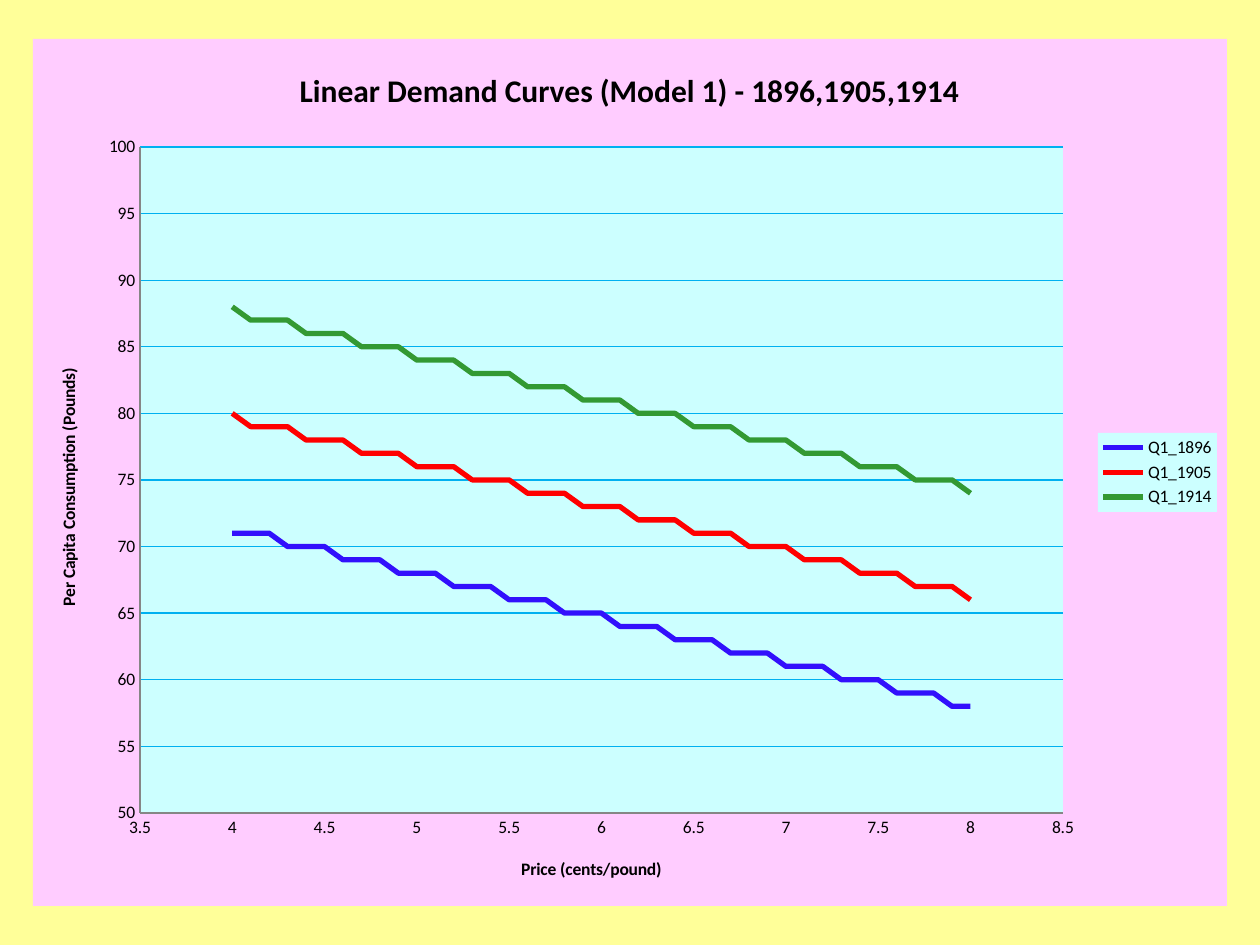
from lxml.etree import SubElement
from pptx import Presentation
from pptx.chart.data import XyChartData
from pptx.dml.color import RGBColor
from pptx.enum.chart import XL_CHART_TYPE as CT, XL_LEGEND_POSITION as LP, XL_TICK_MARK as TM
from pptx.oxml import parse_xml
from pptx.oxml.ns import nsdecls, qn
from pptx.util import Emu, Pt

PX = 914400 // 126
BLACK = RGBColor(0x00, 0x00, 0x00)
YELLOW = RGBColor(0xFF, 0xFF, 0x99)
PINK = RGBColor(0xFF, 0xCC, 0xFF)
CYAN = RGBColor(0xCC, 0xFF, 0xFF)
SKY = RGBColor(0x00, 0xB0, 0xF0)
GREY = RGBColor(0x86, 0x86, 0x86)
BLUE = RGBColor(0x32, 0x10, 0xFC)
RED = RGBColor(0xFF, 0x00, 0x00)
GREEN = RGBColor(0x33, 0x99, 0x33)

FRAME = (33, 39, 1194, 867)
SLOPE = -3.34
PRICES = [n / 10 for n in range(40, 81)]
CURVES = [("Q1_1896", 71.25, BLUE), ("Q1_1905", 79.53, RED), ("Q1_1914", 87.8, GREEN)]


class ChartSlide:
    """Holds the style and the slide with its demand chart."""

    def __init__(self, prs):
        self.s = prs.slides.add_slide(prs.slide_layouts[6])
        self.s.background.fill.solid()
        self.s.background.fill.fore_color.rgb = YELLOW

    def font(self, font, size, bold=False):
        style = {"name": "Calibri", "size": Pt(size), "bold": bold}
        for key, value in style.items():
            setattr(font, key, value)
        font.color.rgb = BLACK

    def line(self, line, color, width):
        line.color.rgb = color
        line.width = Pt(width)

    def fill(self, color):
        return parse_xml(
            f'<c:spPr {nsdecls("c", "a")}><a:solidFill><a:srgbClr val="{color}"/></a:solidFill>'
            "<a:ln><a:noFill/></a:ln></c:spPr>")

    def place(self, el, left, top, width=None, height=None, index=1):
        layout = el.find(qn("c:layout"))
        if layout is None:
            layout = el.makeelement(qn("c:layout"))
            el.insert(index, layout)
        for child in list(layout):
            layout.remove(child)
        manual = SubElement(layout, qn("c:manualLayout"))
        x, y, w, h = FRAME
        values = {"xMode": "edge", "yMode": "edge",
                  "x": round((left - x) / w, 4), "y": round((top - y) / h, 4)}
        if width:
            values = {"layoutTarget": "inner"} | values if index == 0 else values
            values |= {"w": round(width / w, 4), "h": round(height / h, 4)}
        for key, value in values.items():
            SubElement(manual, qn(f"c:{key}")).set("val", str(value))

    def title(self, owner, text, size, left, top):
        tf = owner.text_frame
        tf.text = text
        self.font(tf.paragraphs[0].runs[0].font, size, True)
        self.place(owner._element, left, top)

    def axis(self, axis, low, high, step, text, left, top):
        style = {"minimum_scale": low, "maximum_scale": high, "major_unit": step,
                 "major_tick_mark": TM.NONE, "minor_tick_mark": TM.NONE,
                 "has_major_gridlines": False, "has_title": True}
        for key, value in style.items():
            setattr(axis, key, value)
        axis.tick_labels.number_format = "General"
        axis.tick_labels.number_format_is_linked = False
        self.font(axis.tick_labels.font, 10)
        self.line(axis.format.line, GREY, 0.75)
        self.title(axis.axis_title, text, 10, left, top)

    def chart(self):
        data = XyChartData()
        for name, start, _ in CURVES:
            series = data.add_series(name)
            for price in PRICES:
                series.add_data_point(price, round(start + SLOPE * (price - PRICES[0])))
        box = [Emu(v * PX) for v in FRAME]
        chart = self.s.shapes.add_chart(CT.XY_SCATTER_SMOOTH_NO_MARKERS, *box, data).chart
        self.font(chart.font, 10)
        chart.plots[0].vary_by_categories = False
        for series, (_, _, color) in zip(chart.plots[0].series, CURVES):
            self.line(series.format.line, color, 3)
        chart.has_title = True
        self.title(chart.chart_title, "Linear Demand Curves (Model 1) - 1896,1905,1914", 18, 294, 63)
        self.axis(chart.category_axis, 3.5, 8.5, 0.5, "Price (cents/pound)", 518, 855)
        self.axis(chart.value_axis, 50, 100, 5, "Per Capita Consumption (Pounds)", 54, 365)
        chart.value_axis.has_major_gridlines = True
        self.line(chart.value_axis.major_gridlines.format.line, SKY, 0.75)
        self.legend(chart)
        root = chart._chartSpace.chart
        root.addnext(self.fill(PINK))
        root.plotArea.append(self.fill(CYAN))
        self.place(root.plotArea, 140, 147, 923, 666, index=0)

    def legend(self, chart):
        chart.has_legend = True
        chart.legend.position = LP.RIGHT
        chart.legend.include_in_layout = False
        el = chart.legend._element
        self.place(el, 1098, 433, 119, 79)
        el.find(qn("c:overlay")).addnext(self.fill(CYAN))


def main():
    prs = Presentation()
    prs.slide_width, prs.slide_height = Emu(1260 * PX), Emu(945 * PX)
    ChartSlide(prs).chart()
    prs.save("out.pptx")


if __name__ == "__main__":
    main()
